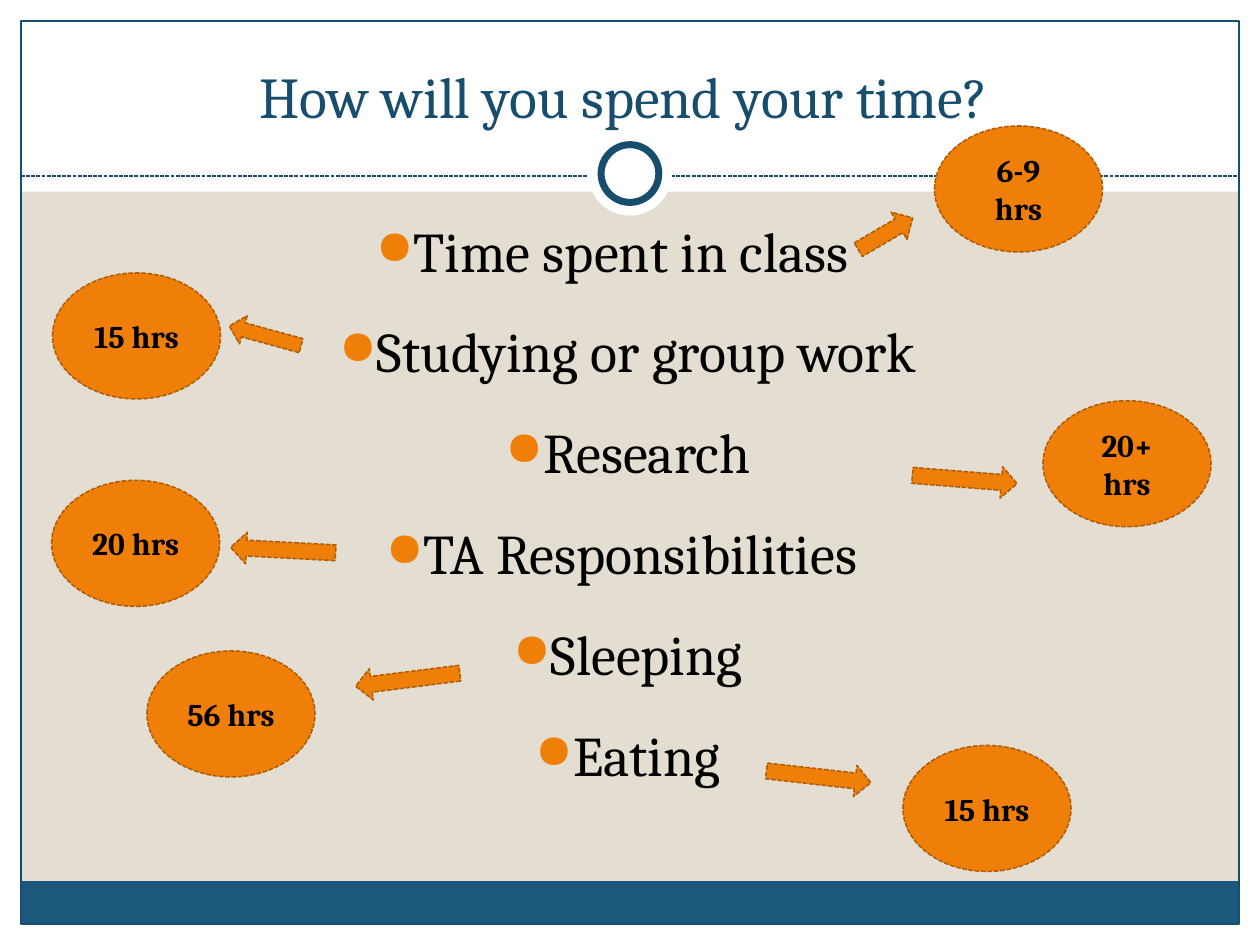
from lxml import etree
from pptx import Presentation
from pptx import util as u
from pptx.dml.color import RGBColor
from pptx.enum import dml, shapes, text
from pptx.oxml.ns import qn

Pt = u.Pt
Shape = shapes.MSO_SHAPE
WIDTH, HEIGHT, MARGIN = 720, 540, 12
BLUE, ORANGE, RUST, WHITE, BLACK = "184E6D", "F07F09", "B25E07", "FFFFFF", "000000"
FONT = "Cambria"

ACTIVITIES = ["Time spent in class \t", "Studying or group work", "Research",
              "TA Responsibilities ", "Sleeping", "Eating"]
# label, left, top
HOURS = [("6-9 hrs", 534, 72), ("15 hrs", 30, 156), ("20+ hrs", 596, 229),
         ("20 hrs", 29.5, 274.5), ("56 hrs", 84, 372), ("15 hrs", 516, 426)]
# left, top, width, height, rotation
ARROWS = [(488, 124.6, 36, 18, 329.7), (130.3, 183.6, 42.5, 16.6, 195.3),
          (521.3, 265, 60, 18, 4.5), (131.8, 305.3, 60, 18, 183),
          (203, 379.4, 60, 18, 172.8), (437.8, 434.9, 60, 18, 6.4)]


def rgb(value):
    return RGBColor.from_string(value)


def set_all(target, **values):
    for name, value in values.items():
        setattr(target, name, value)


def set_line(line, color, width, dashed=False):
    line.color.rgb = rgb(color)
    line.width = Pt(width)
    if dashed:
        line.dash_style = dml.MSO_LINE.SQUARE_DOT


def add_figure(slide, kind, box, fill=None, line=None):
    """Add a preset shape; line holds colour, width and optionally dashed."""
    figure = slide.shapes.add_shape(kind, *map(Pt, box))
    figure.shadow.inherit = False
    if fill:
        figure.fill.solid()
        figure.fill.fore_color.rgb = rgb(fill)
    else:
        figure.fill.background()
    if line:
        set_line(figure.line, *line)
    else:
        figure.line.fill.background()
    return figure


def write(paragraph, words, size, color, bold=False):
    paragraph.alignment = text.PP_ALIGN.CENTER
    run = paragraph.add_run()
    run.text = words
    set_all(run.font, name=FONT, size=Pt(size), bold=bold)
    run.font.color.rgb = rgb(color)


def add_bullet(paragraph):
    set_all(paragraph, space_before=Pt(7.2), space_after=Pt(12))
    props = paragraph._p.get_or_add_pPr()
    props.set("marL", str(Pt(21.6)))
    props.set("indent", str(-Pt(21.6)))
    color = etree.SubElement(props, qn("a:buClr"))
    etree.SubElement(color, qn("a:srgbClr"), val=ORANGE)
    etree.SubElement(props, qn("a:buSzPct"), val="85000")
    etree.SubElement(props, qn("a:buChar"), char="●")


def add_text_frame(slide, box, anchor):
    frame = slide.shapes.add_textbox(*map(Pt, box)).text_frame
    set_all(frame, word_wrap=True, vertical_anchor=anchor)
    return frame


def add_backdrop(slide):
    slide.background.fill.solid()
    slide.background.fill.fore_color.rgb = rgb("E3DED1")
    right, bottom = WIDTH - MARGIN, HEIGHT - MARGIN
    for box in [(0, bottom, WIDTH, MARGIN), (0, 0, WIDTH, 109.5),
                (0, 0, MARGIN, HEIGHT), (right, 0, MARGIN, HEIGHT)]:
        add_figure(slide, Shape.RECTANGLE, box, WHITE)
    add_figure(slide, Shape.RECTANGLE, (11.75, 503.5, 695.75, 24.5), "1B587C")
    add_figure(slide, Shape.RECTANGLE,
               (MARGIN, MARGIN, right - MARGIN, bottom - MARGIN), line=(BLUE, 0.75))
    divider = slide.shapes.add_connector(
        shapes.MSO_CONNECTOR.STRAIGHT, *map(Pt, (MARGIN, 100.6, right, 100.6)))
    set_line(divider.line, BLUE, 0.75, True)
    etree.SubElement(divider._element.spPr, qn("a:effectLst"))
    for diameter, line in [(48, None), (33, (BLUE, 4))]:
        add_figure(slide, Shape.OVAL, (WIDTH / 2 - diameter / 2, 99.2 - diameter / 2,
                                       diameter, diameter), WHITE, line)


def add_activities(slide):
    frame = add_text_frame(slide, (24, 120, 669.6, 360), text.MSO_ANCHOR.TOP)
    for i, activity in enumerate(ACTIVITIES):
        paragraph = frame.add_paragraph() if i else frame.paragraphs[0]
        write(paragraph, activity, 32, BLACK)
        add_bullet(paragraph)


def add_hours(slide, label, left, top):
    bubble = add_figure(slide, Shape.OVAL, (left, top, 96, 72), ORANGE, (RUST, 0.9, True))
    set_all(bubble.text_frame, word_wrap=True, vertical_anchor=text.MSO_ANCHOR.MIDDLE)
    write(bubble.text_frame.paragraphs[0], label, 18, BLACK, True)


def add_arrow(slide, *box, rotation):
    arrow = add_figure(slide, Shape.RIGHT_ARROW, box, ORANGE, (RUST, 0.9, True))
    arrow.rotation = rotation


def main():
    deck = Presentation()
    set_all(deck, slide_width=Pt(WIDTH), slide_height=Pt(HEIGHT))
    slide = deck.slides.add_slide(deck.slide_layouts[6])
    add_backdrop(slide)
    title = add_text_frame(slide, (24, 18, 672, 60), text.MSO_ANCHOR.BOTTOM)
    write(title.paragraphs[0], "How will you spend your time? ", 33, BLUE)
    add_activities(slide)
    for hours in HOURS:
        add_hours(slide, *hours)
    for *box, rotation in ARROWS:
        add_arrow(slide, *box, rotation=rotation)
    deck.save("out.pptx")


if __name__ == "__main__":
    main()
